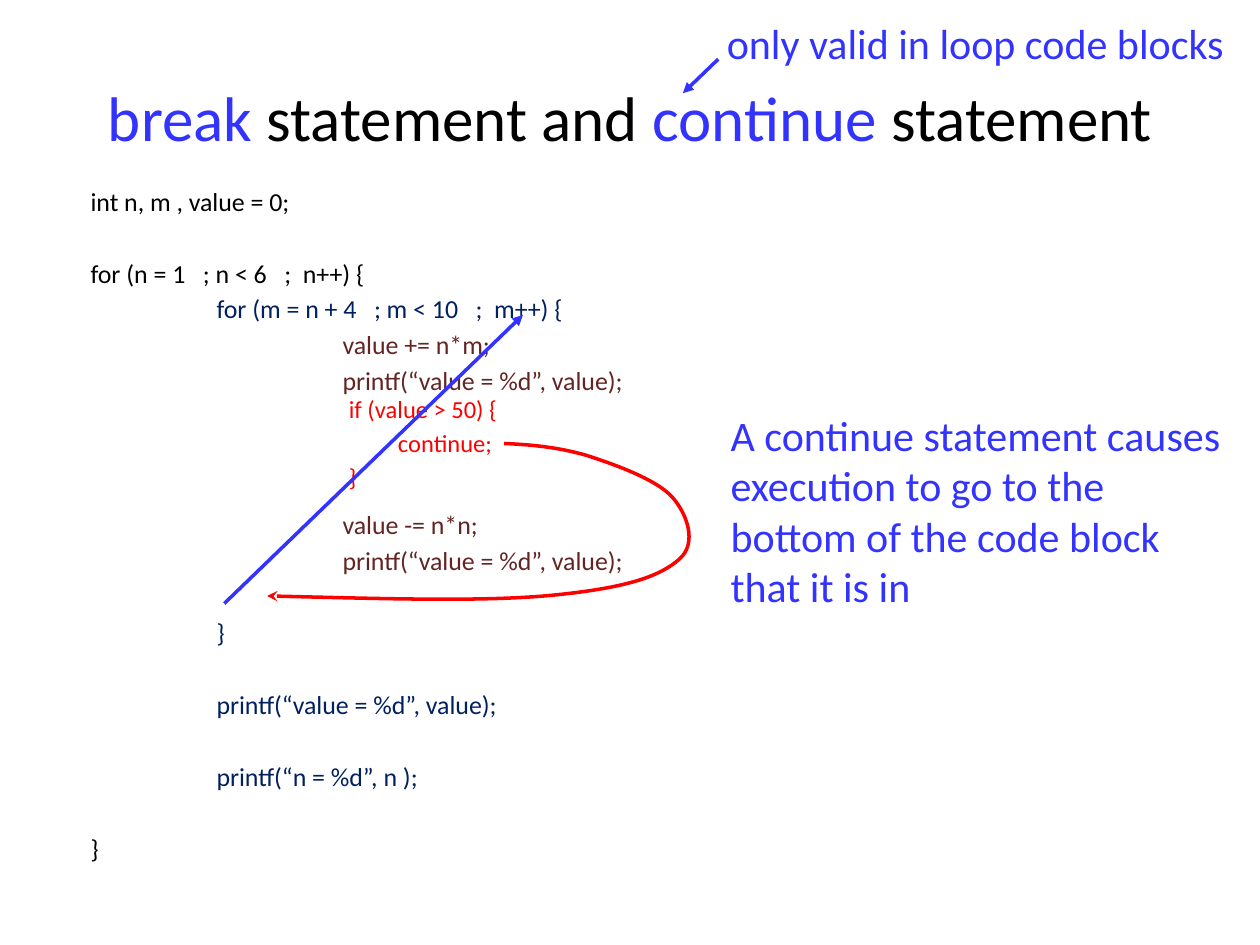
import pptx
import pptx.enum.shapes
import pptx.enum.text
import pptx.oxml
import pptx.oxml.ns
import pptx.util
from lxml import etree
from pptx.util import Inches

FONT = "Calibri"
COLOURS = {
    "black": "000000",
    "blue": "3333FF",
    "navy": "002060",
    "maroon": "632523",
    "red": "FF0000",
}

TITLE = [("break", "blue"), (" statement and ", "black"),
         ("continue", "blue"), (" statement", "black")]

# Code lines: text, colour, indent in inches, open lines above
CODE = [
    ("int n, m , value = 0;", "black", 0, 0),
    ("for (n = 1   ; n < 6   ;  n++) {", "black", 0, 1),
    ("for (m = n + 4   ; m < 10   ;  m++) {", "navy", 1, 0),
    ("value += n*m;", "maroon", 2, 0),
    ("printf(“value = %d”, value);", "maroon", 2, 0),
    ("value -= n*n;", "maroon", 2, 3),
    ("printf(“value = %d”, value);", "maroon", 2, 0),
    ("}", "navy", 1, 1),
    ("printf(“value = %d”, value);", "navy", 1, 1),
    ("printf(“n = %d”, n );", "navy", 1, 1),
    ("}", "black", 0, 1),
]
CONDITION = [
    ("if (value > 50) {", "red", 0, 0),
    ("continue;", "red", 0.39, 0),
    ("}", "red", 0, 0),
]

# Start point, then three points for each Bézier segment
JUMP = [
    (4, 3.52), (4.23, 3.53), (4.42, 3.55), (4.64, 3.61),
    (4.86, 3.68), (5.2, 3.8), (5.33, 3.94),
    (5.45, 4.07), (5.54, 4.31), (5.39, 4.44),
    (5.24, 4.57), (5, 4.66), (4.43, 4.72),
    (3.87, 4.78), (2.99, 4.75), (2.12, 4.73),
]


def colour(name):
    return pptx.dml.color.RGBColor.from_string(COLOURS[name])


def add_span(para, text, size, colour_name):
    span = para.add_run()
    span.text = text
    span.font.name = FONT
    span.font.size = pptx.util.Pt(size)
    span.font.color.rgb = colour(colour_name)


def set_title(page):
    title = page.shapes.title
    title.left, title.top = Inches(0.5), Inches(0.3)
    title.width, title.height = Inches(9), Inches(1.25)
    title.text_frame.vertical_anchor = pptx.enum.text.MSO_ANCHOR.MIDDLE
    para = title.text_frame.paragraphs[0]
    para.alignment = pptx.enum.text.PP_ALIGN.CENTER
    for text, colour_name in TITLE:
        add_span(para, text, 36, colour_name)


def add_text(page, left, top, width, height, lines, size):
    box = page.shapes.add_textbox(Inches(left), Inches(top), Inches(width), Inches(height))
    frame = box.text_frame
    frame.word_wrap = True
    gap = 0.18 * size
    pitch = 1.22 * size + gap
    for number, (text, colour_name, indent, open_lines) in enumerate(lines):
        para = frame.paragraphs[0] if number == 0 else frame.add_paragraph()
        if number:
            para.space_before = pptx.util.Pt(round(gap + open_lines * pitch, 1))
        para._p.get_or_add_pPr().set("marL", str(Inches(indent)))
        add_span(para, text, size, colour_name)


def style_arrow(shape, colour_name, head):
    shape.line.color.rgb = colour(colour_name)
    shape.line.width = pptx.util.Pt(2)
    line = shape.line._get_or_add_ln()
    etree.SubElement(line, pptx.oxml.ns.qn("a:tailEnd"), type=head)


def add_arrow(page, start, end):
    arrow = page.shapes.add_connector(
        pptx.enum.shapes.MSO_CONNECTOR.STRAIGHT, *map(Inches, start + end))
    style_arrow(arrow, "blue", "triangle")
    etree.SubElement(arrow._element.spPr, pptx.oxml.ns.qn("a:effectLst"))


def add_curved_arrow(page, points):
    corners = [(Inches(x), Inches(y)) for x, y in points]
    builder = page.shapes.build_freeform(*corners[0])
    builder.add_line_segments(corners[1:], close=False)
    curve = builder.convert_to_shape()
    curve.fill.background()
    style_arrow(curve, "red", "stealth")
    curve.shadow.inherit = False

    # Turn each three line segments into one Bézier segment
    segments = curve._element.findall(".//" + pptx.oxml.ns.qn("a:lnTo"))
    for first in range(0, len(segments), 3):
        bezier = etree.Element(pptx.oxml.ns.qn("a:cubicBezTo"))
        segments[first].addprevious(bezier)
        for segment in segments[first:first + 3]:
            bezier.append(segment[0])
            segment.getparent().remove(segment)


def main():
    deck = pptx.Presentation()
    deck.slide_width, deck.slide_height = Inches(10), Inches(7.5)
    page = deck.slides.add_slide(deck.slide_layouts[5])

    # Title and code
    set_title(page)
    add_text(page, 0.62, 1.42, 8.62, 5.42, CODE, 14.8)
    add_text(page, 2.67, 3.08, 1.92, 1, CONDITION, 14)

    # Remarks
    add_text(page, 5.67, 0.09, 4.33, 0.5,
             [("only valid in loop code blocks", "blue", 0, 0)], 24)
    add_text(page, 5.7, 3.2, 4.19, 1.72,
             [("A continue statement causes execution to go to the bottom "
               "of the code block that it is in", "blue", 0, 0)], 24)

    # Arrows
    add_arrow(page, (5.7, 0.47), (5.42, 0.74))
    add_curved_arrow(page, JUMP)
    add_arrow(page, (1.78, 4.79), (4.15, 2.5))

    deck.save("out.pptx")


if __name__ == "__main__":
    main()
